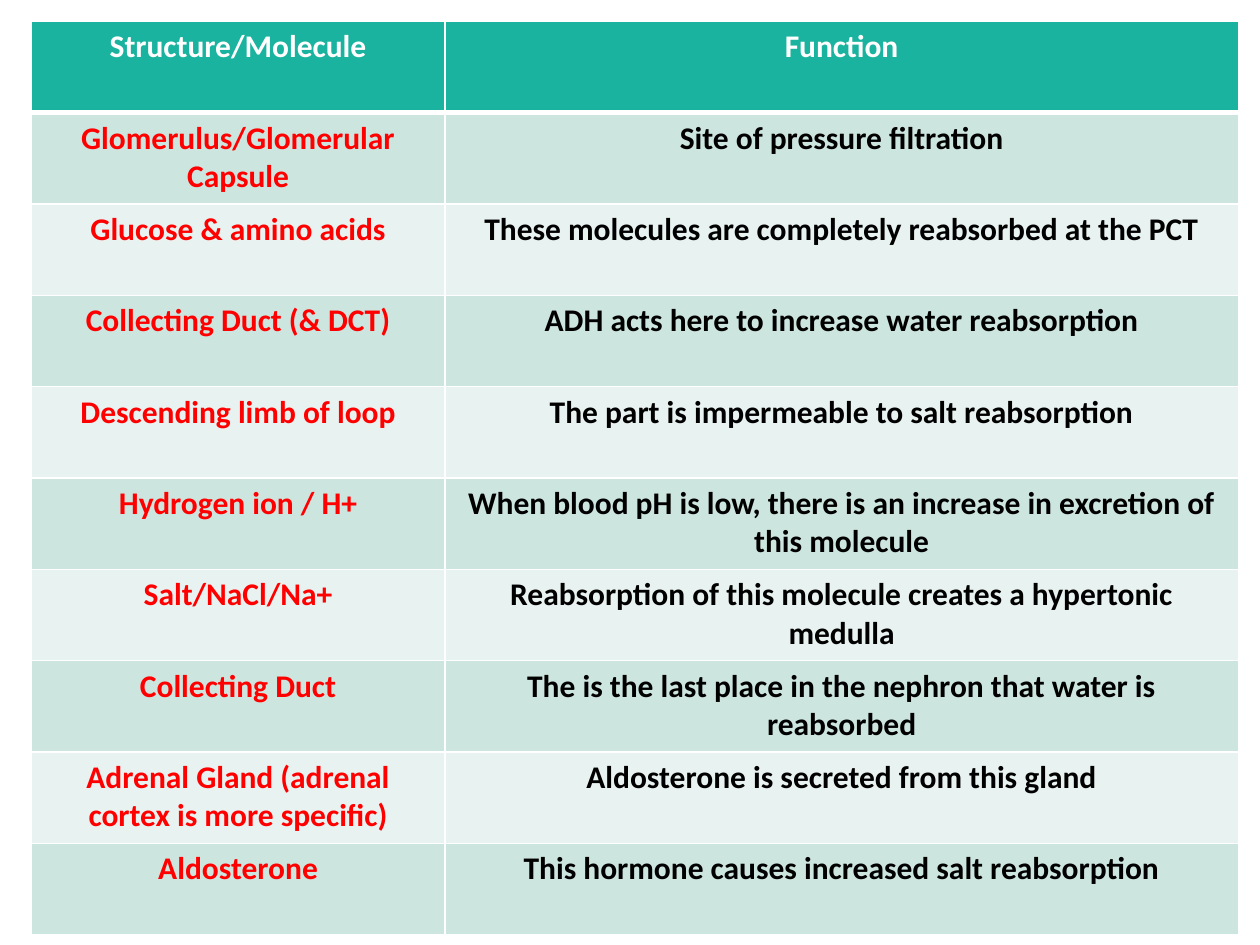
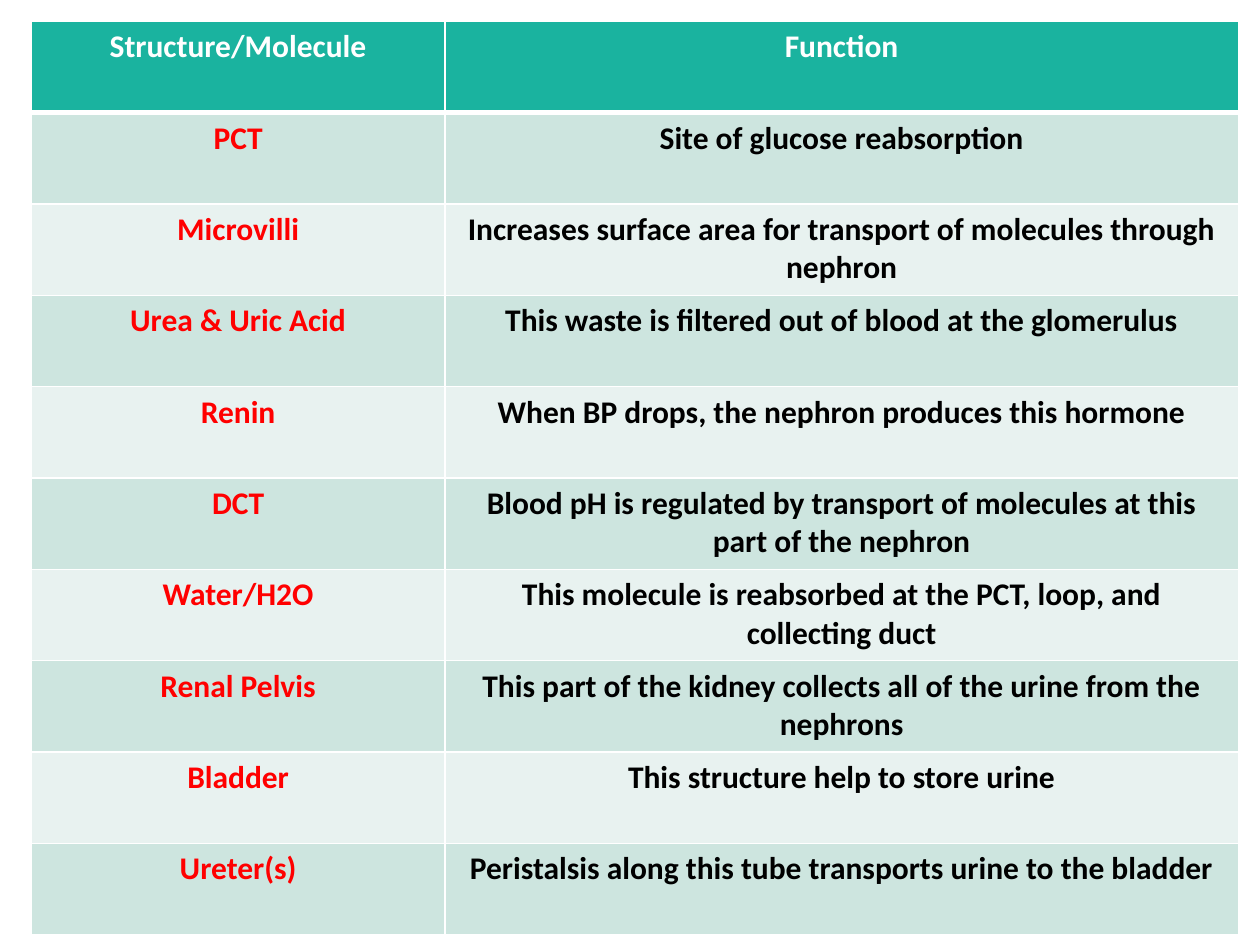
from lxml.etree import SubElement
from pptx import Presentation
from pptx.dml.color import RGBColor
from pptx.enum.text import PP_ALIGN
from pptx.oxml.ns import qn
from pptx.util import Inches, Pt

HEAD = ("Structure/Molecule", "Function")
BOX = (0.25, 0.17, 9.58, 7.25)
TERM_WIDTH = 3.28
WHITE, TEAL = "FFFFFF", "1AB39F"
BANDS = ("E8F2F0", "CDE5DF")
INKS = ("FF0000", "000000")
FONT = {"name": "Calibri", "size": Pt(18), "bold": True}

FILTERING = [
    ("Glomerulus/Glomerular Capsule", "Site of pressure filtration"),
    ("Glucose & amino acids",
     "These molecules are completely reabsorbed at the PCT"),
    ("Collecting Duct (& DCT)",
     "ADH acts here to increase water reabsorption"),
    ("Descending limb of loop",
     "The part is impermeable to salt reabsorption"),
    ("Hydrogen ion / H+",
     "When blood pH is low, there is an increase in excretion of this molecule"),
    ("Salt/NaCl/Na+",
     "Reabsorption of this molecule creates a hypertonic medulla"),
    ("Collecting Duct",
     "The is the last place in the nephron that water is reabsorbed"),
    ("Adrenal Gland (adrenal cortex is more specific)",
     "Aldosterone is secreted from this gland"),
    ("Aldosterone", "This hormone causes increased salt reabsorption"),
]

TRANSPORT = [
    ("PCT", "Site of glucose reabsorption"),
    ("Microvilli",
     "Increases surface area for transport of molecules through nephron"),
    ("Urea & Uric Acid",
     "This waste is filtered out of blood at the glomerulus"),
    ("Renin", "When BP drops, the nephron produces this hormone"),
    ("DCT",
     "Blood pH is regulated by transport of molecules at this part of the nephron"),
    ("Water/H2O",
     "This molecule is reabsorbed at the PCT, loop, and collecting duct"),
    ("Renal Pelvis",
     "This part of the kidney collects all of the urine from the nephrons"),
    ("Bladder", "This structure help to store urine"),
    ("Ureter(s)",
     "Peristalsis along this tube transports urine to the bladder"),
]


def color(code):
    return RGBColor.from_string(code)


def add_borders(cell, top, bottom):
    """Rule the cell in white; top and bottom are widths in points."""
    props = cell._tc.get_or_add_tcPr()
    for side, width in {"L": 1, "R": 1, "T": top, "B": bottom}.items():
        line = SubElement(props, qn(f"a:ln{side}"), w=str(Pt(width)))
        fill = SubElement(line, qn("a:solidFill"))
        SubElement(fill, qn("a:srgbClr"), val=WHITE)


def fill_cell(cell, text, ink, back):
    cell.fill.solid()
    cell.fill.fore_color.rgb = color(back)
    para = cell.text_frame.paragraphs[0]
    para.alignment = PP_ALIGN.CENTER
    run = para.add_run()
    run.text = text
    for name, value in FONT.items():
        setattr(run.font, name, value)
    run.font.color.rgb = color(ink)


def add_terms(slide, box, terms):
    """Draw a table of terms and their functions within box."""
    rows = [HEAD, *terms]
    left, top, width, height = box
    table = slide.shapes.add_table(
        len(rows), len(HEAD), *(Inches(side) for side in box)).table
    for column, size in zip(table.columns, (TERM_WIDTH, width - TERM_WIDTH)):
        column.width = Inches(size)
    for r, texts in enumerate(rows):
        table.rows[r].height = Inches(height / len(rows))
        for c, text in enumerate(texts):
            cell = table.cell(r, c)
            add_borders(cell, 3 if r == 1 else 1, 3 if r == 0 else 1)
            ink, back = (INKS[c], BANDS[r % 2]) if r else (WHITE, TEAL)
            fill_cell(cell, text, ink, back)


def main():
    deck = Presentation()
    deck.slide_width, deck.slide_height = Inches(10), Inches(7.5)
    blank = deck.slide_layouts.get_by_name("Blank")
    for terms in (FILTERING, TRANSPORT):
        add_terms(deck.slides.add_slide(blank), BOX, terms)
    deck.save("out.pptx")


if __name__ == "__main__":
    main()
